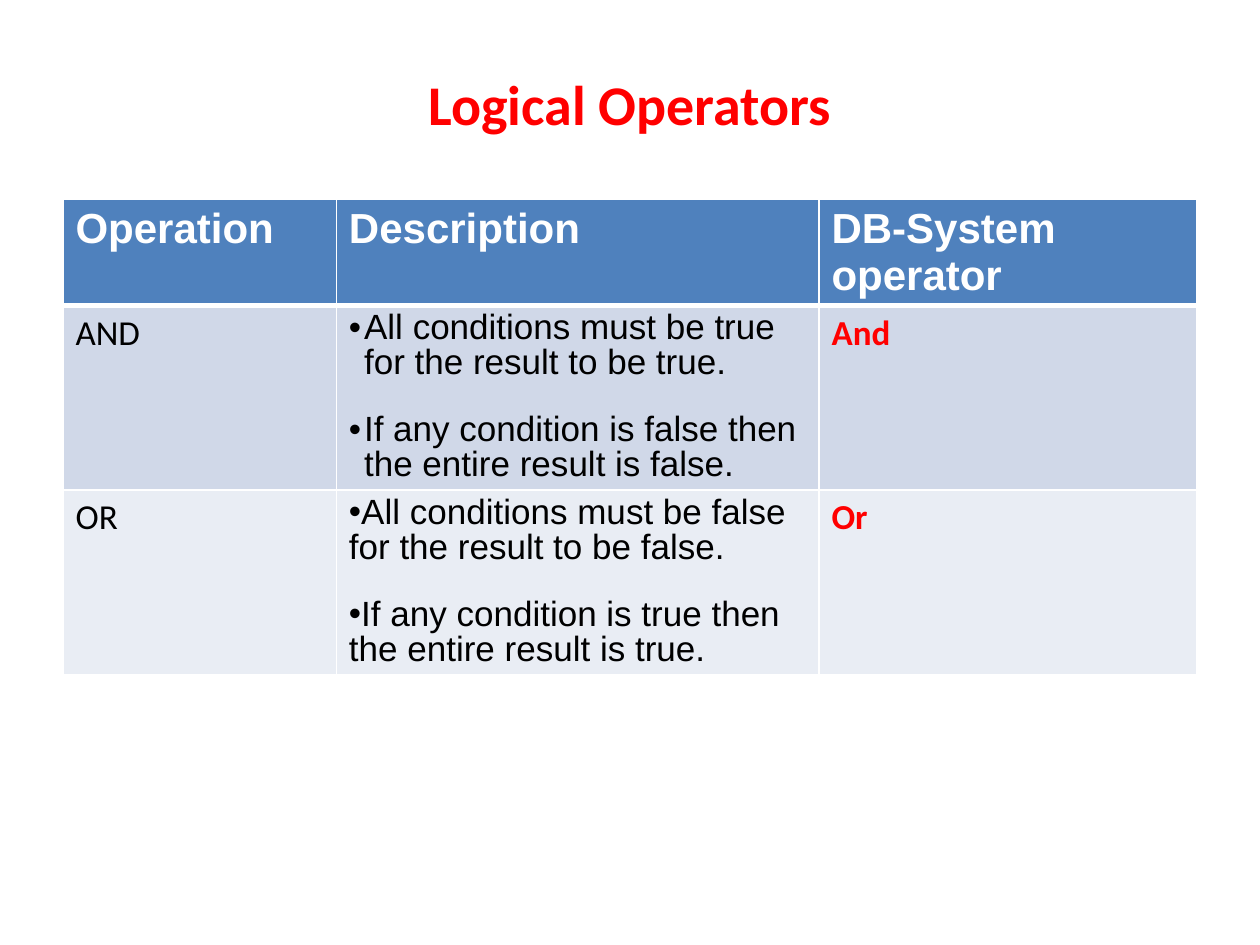
from pptx import Presentation
from pptx.dml.color import RGBColor
from pptx.enum.text import MSO_ANCHOR, PP_ALIGN
from pptx.oxml.ns import qn
from pptx.util import Inches, Pt
from lxml.etree import SubElement

HEADER = {"size": Pt(24), "name": "Arial", "bold": True, "color": "FFFFFF"}
NAME = {"size": Pt(20), "name": "Calibri", "bold": False, "color": "000000"}
DESCRIPTION = {**NAME, "name": "Arial"}
OPERATOR = {**NAME, "bold": True, "color": "FF0000"}
TITLE = {**OPERATOR, "size": Pt(32)}

COLUMN_WIDTHS = [2.17, 3.83, 3]
ROW_HEIGHTS = [0.84, 1.46, 1.46]
ROW_FILLS = ["4F81BD", "D0D8E8", "E9EDF4"]
HEADINGS = ["Operation", "Description", "DB-System operator"]
OPERATIONS = [
    ("AND", ["All conditions must be true for the result to be true.",
             "If any condition is false then the entire result is false."], "And", 0.12),
    ("OR", ["All conditions must be false for the result to be false.",
            "If any condition is true then the entire result is true."], "Or", 0),
]


def color(value):
    return RGBColor.from_string(value)


def write(para, text, formats):
    span = para.add_run()
    span.text = text
    for key, value in formats.items():
        if key == "color":
            span.font.color.rgb = color(value)
        else:
            setattr(span.font, key, value)


def write_bullets(frame, items, indent):
    for index, item in enumerate(items):
        para = frame.add_paragraph() if index else frame.paragraphs[0]
        para.line_spacing = 0.9
        properties = para._p.get_or_add_pPr()
        properties.set("marL", str(Inches(indent)))
        properties.set("indent", str(Inches(-indent)))
        before = SubElement(properties, qn("a:spcBef"))
        SubElement(before, qn("a:spcPct"), val="90000")
        SubElement(properties, qn("a:buFont"), typeface="Arial")
        SubElement(properties, qn("a:buChar"), char="•")
        write(para, item, DESCRIPTION)


def style_cell(cell, fill, top, bottom):
    properties = cell._tc.get_or_add_tcPr()
    for side, width in {"L": 1, "R": 1, "T": top, "B": bottom}.items():
        line = SubElement(properties, qn(f"a:ln{side}"), w=str(Pt(width)))
        solid = SubElement(line, qn("a:solidFill"))
        SubElement(solid, qn("a:srgbClr"), val="FFFFFF")
    cell.fill.solid()
    cell.fill.fore_color.rgb = color(fill)


def add_title(page, text):
    title = page.shapes.title
    place = {"left": 0.5, "top": 0.3, "width": 9, "height": 1.03}
    for key, value in place.items():
        setattr(title, key, Inches(value))
    title.text_frame.vertical_anchor = MSO_ANCHOR.MIDDLE
    para = title.text_frame.paragraphs[0]
    para.alignment = PP_ALIGN.CENTER
    write(para, text, TITLE)


def add_operator_table(page):
    table = page.shapes.add_table(
        len(ROW_HEIGHTS), len(COLUMN_WIDTHS), Inches(0.5), Inches(1.58),
        Inches(sum(COLUMN_WIDTHS)), Inches(sum(ROW_HEIGHTS))).table
    for column, width in zip(table.columns, COLUMN_WIDTHS):
        column.width = Inches(width)
    for index, (row, height, fill) in enumerate(zip(table.rows, ROW_HEIGHTS, ROW_FILLS)):
        row.height = Inches(height)
        for cell in row.cells:
            style_cell(cell, fill, 3 if index == 1 else 1, 3 if index == 0 else 1)
    for column, heading in enumerate(HEADINGS):
        write(table.cell(0, column).text_frame.paragraphs[0], heading, HEADER)
    for row, (name, rules, operator, indent) in enumerate(OPERATIONS, 1):
        write(table.cell(row, 0).text_frame.paragraphs[0], name, NAME)
        write_bullets(table.cell(row, 1).text_frame, rules, indent)
        write(table.cell(row, 2).text_frame.paragraphs[0], operator, OPERATOR)


def main():
    deck = Presentation()
    deck.slide_width = Inches(10)
    deck.slide_height = Inches(7.5)
    page = deck.slides.add_slide(deck.slide_layouts[5])
    add_title(page, "Logical Operators")
    add_operator_table(page)
    deck.save("out.pptx")


if __name__ == "__main__":
    main()
